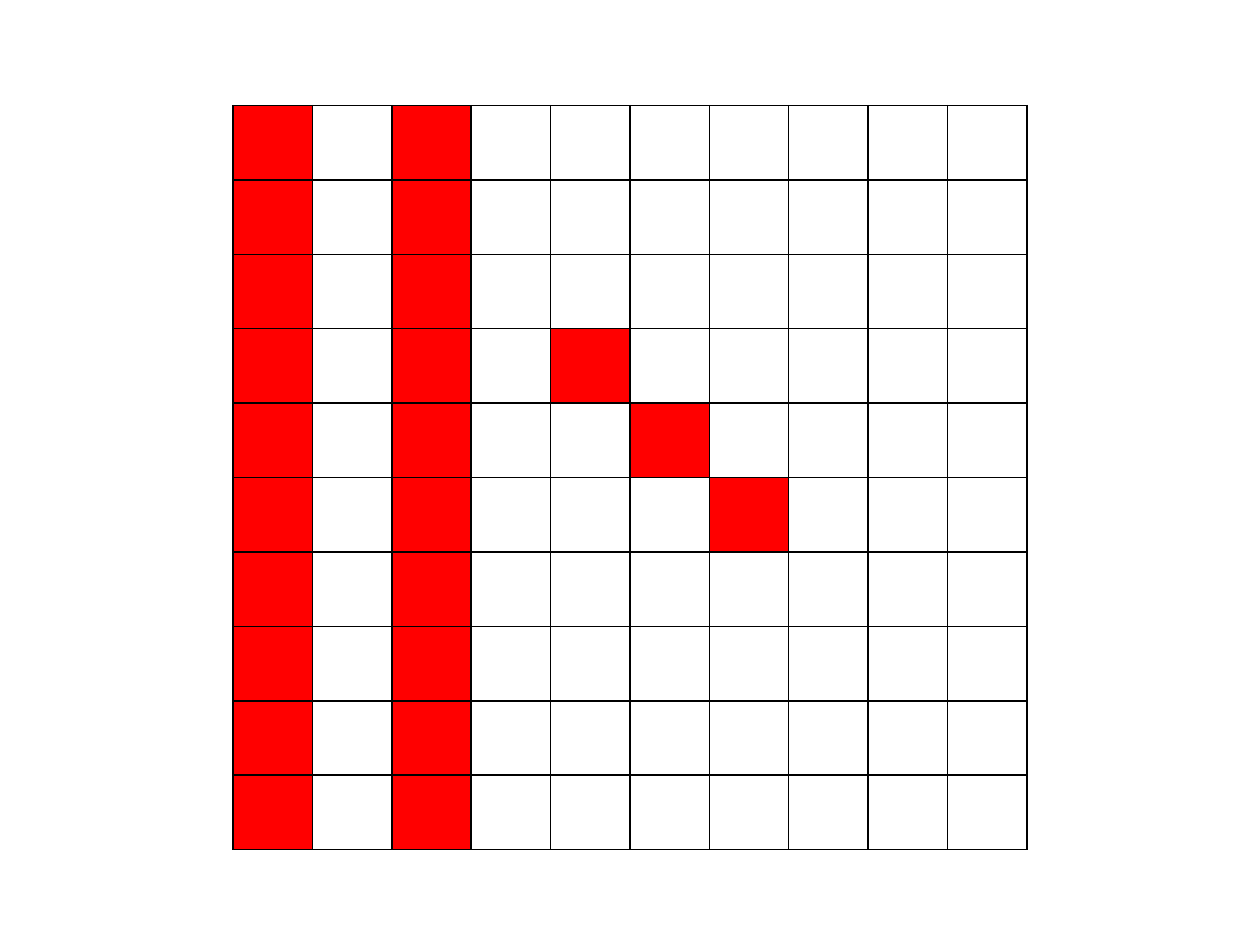
from lxml import etree
from pptx import Presentation
from pptx.dml.color import RGBColor
from pptx.oxml.ns import qn
from pptx.util import Pt

HUES = {"mark": "FF0000", "plain": "FFFFFF", "line": "000000"}
SIZE = 10
WIDE, HIGH = 45.36, 42.52
BARS = {0, 2}                       # columns marked from top to bottom
STEPS = {(3, 4), (4, 5), (5, 6)}    # diagonal of marked cells
CLEAR = {1, 8}                      # columns without a fill

deck = Presentation()
deck.slide_width, deck.slide_height = Pt(720), Pt(540)
slide = deck.slides.add_slide(deck.slide_layouts[6])

# Grid
frame = slide.shapes.add_table(SIZE, SIZE, Pt(133.2), Pt(60.3),
                               Pt(WIDE * SIZE), Pt(HIGH * SIZE))
grid = frame.table
grid.first_row = grid.horz_banding = False
for col in grid.columns:
    col.width = Pt(WIDE)
for row in grid.rows:
    row.height = Pt(HIGH)

# Borders and fills
for r in range(SIZE):
    for c in range(SIZE):
        cell = grid.cell(r, c)
        props = cell._tc.get_or_add_tcPr()
        for side in ("lnL", "lnR", "lnT", "lnB"):
            edge = etree.SubElement(props, qn("a:" + side), w=str(Pt(1)))
            paint = etree.SubElement(edge, qn("a:solidFill"))
            etree.SubElement(paint, qn("a:srgbClr"), val=HUES["line"])
        if c in CLEAR:
            cell.fill.background()
        else:
            cell.fill.solid()
            hue = "mark" if c in BARS or (r, c) in STEPS else "plain"
            cell.fill.fore_color.rgb = RGBColor.from_string(HUES[hue])

deck.save("out.pptx")
